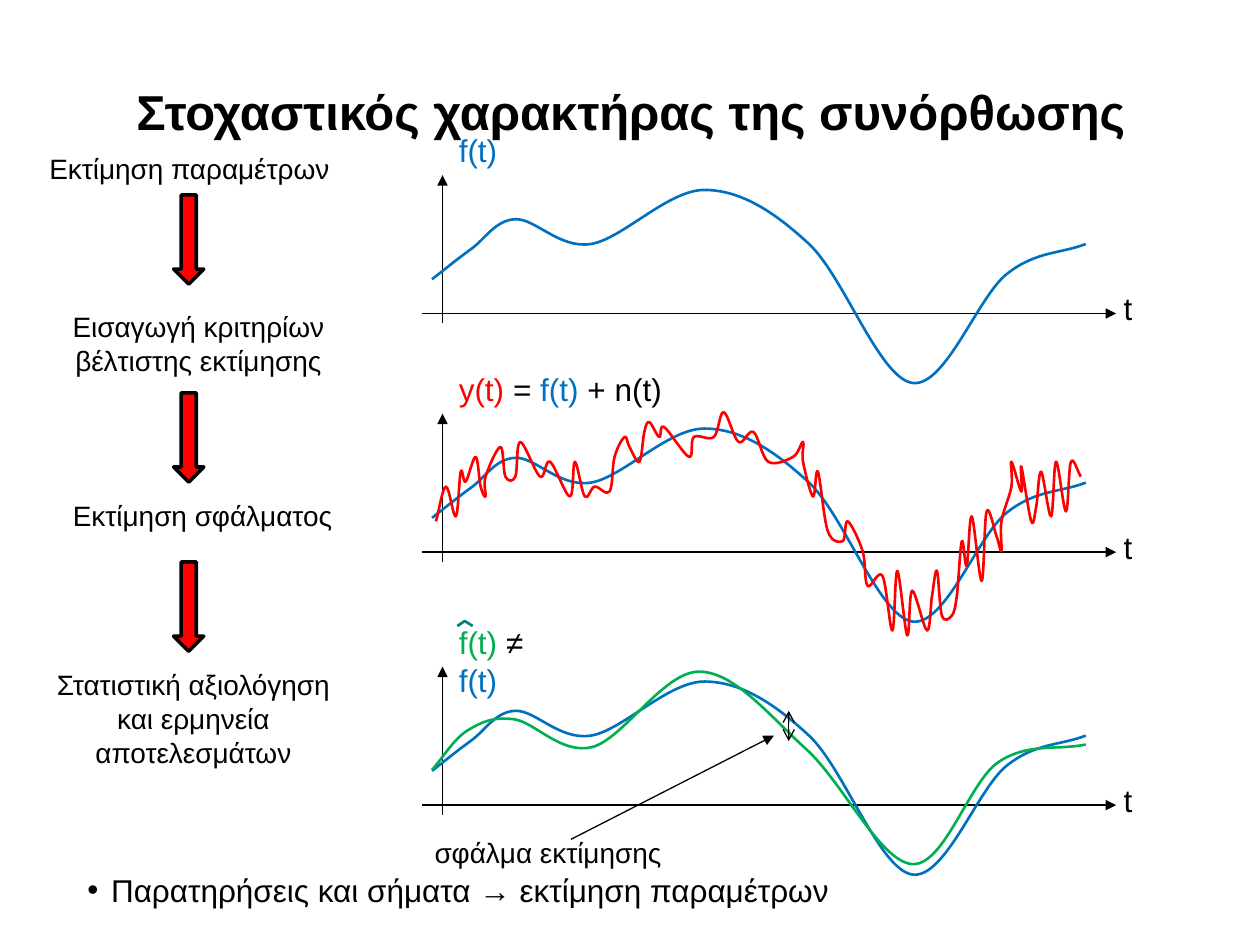
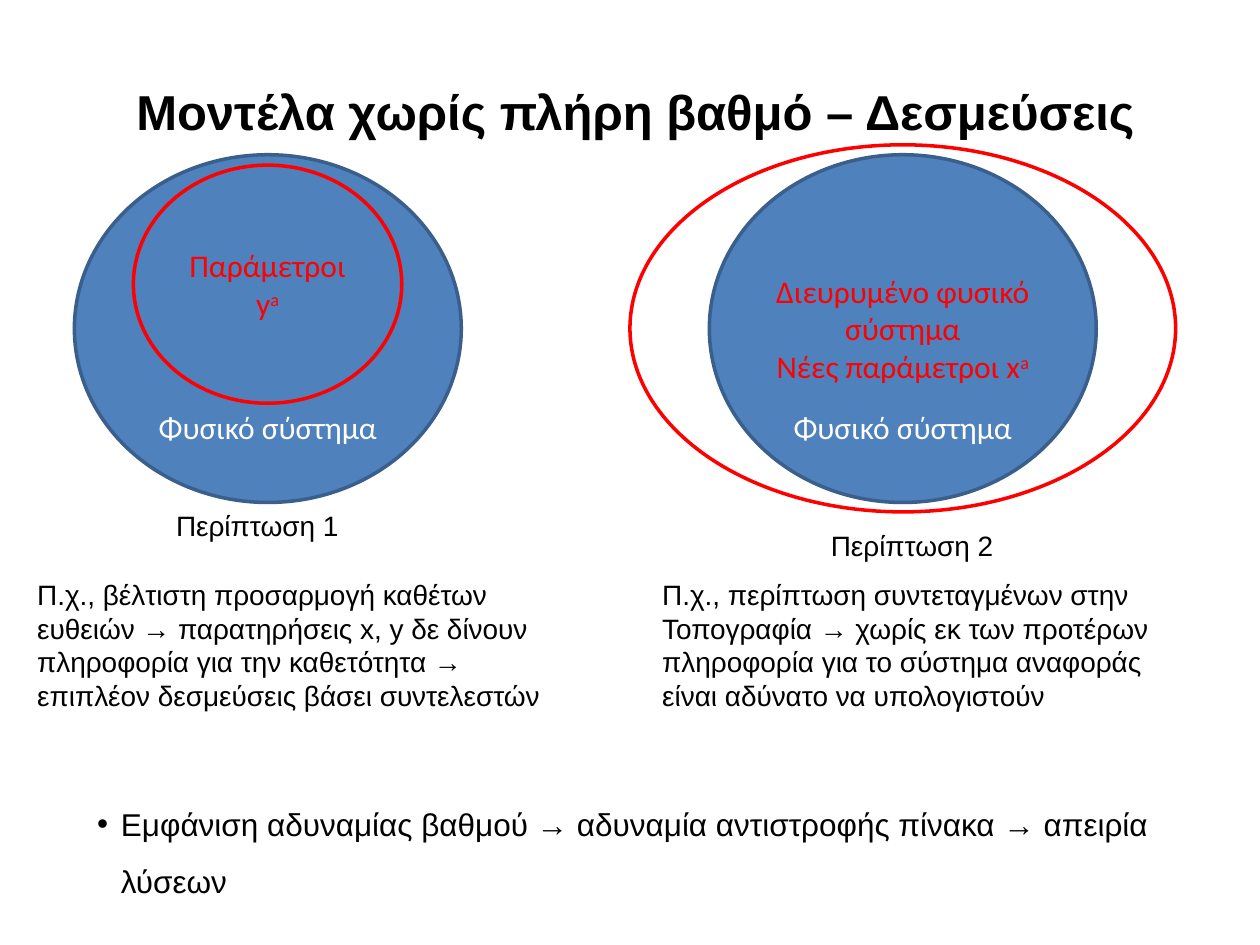
"""Build two slides on the stochastic character of adjustment and on rank-deficient models."""
from itertools import pairwise

from lxml.etree import SubElement
from pptx import Presentation
from pptx.dml.color import RGBColor
from pptx.enum.shapes import MSO_CONNECTOR, MSO_SHAPE
from pptx.enum.text import MSO_ANCHOR, MSO_AUTO_SIZE, PP_ALIGN
from pptx.oxml.ns import qn
from pptx.util import Cm, Pt

COLORS = {
    "black": "000000", "white": "FFFFFF", "red": "FF0000", "signal": "0070C0",
    "estimate": "00B050", "hat": "008080", "system": "4F81BD", "system_edge": "3A5F8C",
}
TITLE_SIZE, BODY_SIZE, LABEL_SIZE = 28, 18, 16
TITLE_BOX = (2.5, 1.52, 20.9, 1.45)

STOCHASTIC = {
    "title": "Στοχαστικός χαρακτήρας της συνόρθωσης",
    "bullet": ("Παρατηρήσεις και σήματα → εκτίμηση παραμέτρων", (1.51, 17.05, 22, 1.3)),
}
RANK = {
    "title": "Μοντέλα χωρίς πλήρη βαθμό – Δεσμεύσεις",
    "bullet": ("Εμφάνιση αδυναμίας βαθμού → αδυναμία αντιστροφής πίνακα → απειρία λύσεων",
               (1.71, 15.72, 22, 2.41)),
}
STEPS = [
    ("Εκτίμηση παραμέτρων", (0.71, 2.93, 6.22, 0.94), False),
    ("Εισαγωγή κριτηρίων βέλτιστης εκτίμησης", (0.9, 6.12, 6.2, 1.63), True),
    ("Εκτίμηση σφάλματος", (1.1, 9.93, 5.97, 0.94), False),
    ("Στατιστική αξιολόγηση και ερμηνεία αποτελεσμάτων", (0.88, 13.34, 6.04, 3), True),
]
STEP_ARROW_TOPS = [3.93, 11.33, 7.92]

SIGNAL = [(8.71, -0.69), (9.5, -1.3), (10.39, -1.9), (11.91, -1.4), (14.2, -2.49),
          (16.31, -1.4), (18.39, 1.4), (20.29, -0.79), (21.89, -1.4)]
ESTIMATE = [(8.71, -0.71), (9.42, -1.5), (10.36, -1.73), (11.94, -1.17), (14.1, -2.69),
            (16.26, -1.12), (18.39, 1.19), (20.12, -0.86), (21.89, -1.22)]
HAT = [(9.22, -3.61), (9.37, -3.71), (9.53, -3.61)]
NOISE_ORIGIN = (8.79, -2.82)
NOISE_MILLIMETRES = [
    (0, 22), (2, 15), (4, 21), (5, 12), (6, 14), (8, 9), (9, 15), (10, 17), (10, 13),
    (13, 7), (14, 13), (16, 13), (17, 6), (21, 13), (23, 10), (27, 17), (28, 10),
    (30, 17), (32, 15), (35, 16), (36, 9), (38, 5), (39, 7), (41, 10), (42, 4), (43, 2),
    (45, 5), (46, 3), (51, 9), (52, 5), (56, 5), (58, 0), (61, 6), (64, 4), (67, 10),
    (72, 9), (74, 6), (74, 10), (76, 17), (77, 12), (79, 24), (82, 26), (83, 22),
    (86, 28), (87, 35), (90, 33), (92, 44), (93, 32), (95, 45), (96, 36), (99, 44),
    (100, 37), (101, 32), (102, 41), (104, 41), (105, 37), (106, 26), (107, 31),
    (108, 21), (110, 34), (111, 20), (113, 25), (114, 28), (114, 22), (116, 15),
    (116, 10), (118, 16), (118, 11), (120, 22), (121, 19), (122, 12), (124, 21),
    (125, 10), (127, 20), (128, 10), (130, 13),
]
NOISE = [(NOISE_ORIGIN[0] + x / 10, NOISE_ORIGIN[1] + y / 10) for x, y in NOISE_MILLIMETRES]

PANELS = [
    {"axis": 6.32, "curves": [(SIGNAL, "signal")], "width": 1.3, "wrap": False,
     "formula": [("f(t)", "signal")]},
    {"axis": 11.13, "curves": [(SIGNAL, "signal"), (NOISE, "red")], "width": 4.6, "wrap": False,
     "formula": [("y(t)", "red"), (" = ", "black"), ("f(t) ", "signal"), ("+ n(t)", "black")]},
    {"axis": 16.23, "curves": [(SIGNAL, "signal"), (ESTIMATE, "estimate")], "width": 2.74,
     "wrap": True, "formula": [("f(t)", "estimate"), (" ≠ ", "black"), ("f(t)", "signal")]},
]
ERROR_LABEL = ("σφάλμα εκτίμησης", (8.51, 16.71, 5.11, 0.94))
ERROR_SPAN = ((15.9, 14.33), (15.9, 14.94))
ERROR_POINTER = ((11.51, 16.92), (15.6, 14.83))

SYSTEM = "Φυσικό σύστημα"
CASES = [
    {"system": (1.5, 3.12, 7.8, 7.01), "parameters": (2.69, 3.33, 5.41, 4.8),
     "lines": [[("Παράμετροι", False)], [("y", False), ("a", True)]],
     "caption": ("Περίπτωση 1", (3.3, 10.13, 4.19, 0.94)),
     "example": ("Π.χ., βέλτιστη προσαρμογή καθέτων ευθειών → παρατηρήσεις x, y δε δίνουν "
                 "πληροφορία για την καθετότητα → επιπλέον δεσμεύσεις βάσει συντελεστών",
                 (0.5, 11.52, 11.4, 3.76))},
    {"system": (14.3, 3.12, 7.8, 7.01), "parameters": (12.7, 2.92, 11, 7.4),
     "lines": [[("Διευρυμένο φυσικό σύστημα", False)],
               [("Νέες παράμετροι x", False), ("a", True)]],
     "caption": ("Περίπτωση 2", (16.5, 10.53, 4.19, 0.94)),
     "example": ("Π.χ., περίπτωση συντεταγμένων στην Τοπογραφία → χωρίς εκ των προτέρων "
                 "πληροφορία για το σύστημα αναφοράς είναι αδύνατο να υπολογιστούν",
                 (13.1, 11.52, 11.4, 3.76))},
]


def rgb(name):
    return RGBColor.from_string(COLORS[name])


def add_run(paragraph, text, size, color="black", font="Arial", bold=False, raised=False):
    run = paragraph.add_run()
    run.text = text
    run.font.size, run.font.name, run.font.bold = Pt(size), font, bold
    run.font.color.rgb = rgb(color)
    if raised:
        run._r.get_or_add_rPr().set("baseline", "30000")


def add_text(slide, box, pieces, size, wrap=True, align=PP_ALIGN.LEFT, bold=False):
    frame = slide.shapes.add_textbox(*map(Cm, box)).text_frame
    frame.word_wrap = wrap
    frame.auto_size = MSO_AUTO_SIZE.SHAPE_TO_FIT_TEXT
    paragraph = frame.paragraphs[0]
    paragraph.alignment = align
    for text, color in pieces:
        add_run(paragraph, text, size, color, bold=bold)
    return paragraph


def add_shape(slide, kind, box, fill, edge):
    shape = slide.shapes.add_shape(kind, *map(Cm, box))
    shape.shadow.inherit = False
    if fill:
        shape.fill.solid()
        shape.fill.fore_color.rgb = rgb(fill)
    else:
        shape.fill.background()
    shape.line.color.rgb, shape.line.width = rgb(edge), Pt(2)
    return shape


def add_ellipse(slide, box, fill, edge, lines, color, anchor):
    frame = add_shape(slide, MSO_SHAPE.OVAL, box, fill, edge).text_frame
    frame.word_wrap, frame.vertical_anchor = True, anchor
    for index, line in enumerate(lines):
        paragraph = frame.add_paragraph() if index else frame.paragraphs[0]
        paragraph.alignment = PP_ALIGN.CENTER
        for text, raised in line:
            add_run(paragraph, text, BODY_SIZE, color, "Calibri", raised=raised)


def add_arrow(slide, start, end, **heads):
    connector = slide.shapes.add_connector(
        MSO_CONNECTOR.STRAIGHT, *map(Cm, start), *map(Cm, end))
    connector.line.color.rgb, connector.line.width = rgb("black"), Pt(0.75)
    line = connector.line._get_or_add_ln()
    for tag, kind in heads.items():
        SubElement(line, qn(f"a:{tag}"), type=kind)
    SubElement(connector._element.spPr, qn("a:effectLst"))


def add_outline(slide, knots, axis, color):
    start, *rest = [(Cm(x), Cm(axis + y)) for x, y in knots]
    builder = slide.shapes.build_freeform(*start)
    builder.add_line_segments(rest, close=False)
    outline = builder.convert_to_shape()
    outline.shadow.inherit = False
    outline.fill.background()
    outline.line.color.rgb, outline.line.width = rgb(color), Pt(1.5)
    return outline


def add_curve(slide, knots, axis, color):
    """Draw a Catmull-Rom curve through the knots as cubic Bézier segments."""
    geometry = add_outline(slide, knots, axis, color)._element.spPr.find(qn("a:custGeom"))
    points = [(int(pt.get("x")), int(pt.get("y"))) for pt in geometry.iter(qn("a:pt"))]
    padded = [points[0], *points, points[-1]]
    thirds = [((c[0] - a[0]) / 6, (c[1] - a[1]) / 6) for a, c in zip(padded, padded[2:])]
    for end in (0, -1):
        thirds[end] = (thirds[end][0] * 2, thirds[end][1] * 2)
    segments = list(geometry.iter(qn("a:lnTo")))
    for segment, ((p, m), (q, n)) in zip(segments, pairwise(zip(points, thirds))):
        segment.tag = qn("a:cubicBezTo")
        controls = [(p[0] + m[0], p[1] + m[1]), (q[0] - n[0], q[1] - n[1])]
        for index, (x, y) in enumerate(controls):
            point = SubElement(segment, qn("a:pt"), x=str(round(x)), y=str(round(y)))
            segment.insert(index, point)


def add_slide(presentation, content):
    slide = presentation.slides.add_slide(presentation.slide_layouts[6])
    add_text(slide, TITLE_BOX, [(content["title"], "black")], TITLE_SIZE, wrap=False, bold=True)
    text, box = content["bullet"]
    paragraph = add_text(slide, box, [(text, "black")], BODY_SIZE)
    paragraph.line_spacing = 1.5
    properties = paragraph._p.get_or_add_pPr()
    properties.set("marL", str(Cm(0.48)))
    properties.set("indent", str(-Cm(0.48)))
    SubElement(properties, qn("a:buFont"), typeface="Arial")
    SubElement(properties, qn("a:buChar"), char="•")
    return slide


def add_panel(slide, panel):
    axis = panel["axis"]
    add_arrow(slide, (8.51, axis), (22.5, axis), tailEnd="triangle")
    add_text(slide, (22.4, axis - 0.61, 0.69, 1.02), [("t", "black")], BODY_SIZE, wrap=False)
    add_arrow(slide, (8.92, axis + 0.2), (8.92, axis - 2.79), tailEnd="triangle")
    for knots, color in panel["curves"]:
        add_curve(slide, knots, axis, color)
    add_text(slide, (9, axis - 3.8, panel["width"], 1.02), panel["formula"],
             BODY_SIZE, wrap=panel["wrap"])


def build_stochastic(presentation):
    slide = add_slide(presentation, STOCHASTIC)
    for panel in PANELS:
        add_panel(slide, panel)
    add_outline(slide, HAT, PANELS[-1]["axis"], "hat")
    add_arrow(slide, *ERROR_SPAN, headEnd="arrow", tailEnd="arrow")
    add_arrow(slide, *ERROR_POINTER, tailEnd="triangle")
    text, box = ERROR_LABEL
    add_text(slide, box, [(text, "black")], LABEL_SIZE, wrap=False)
    for text, box, wrap in STEPS:
        add_text(slide, box, [(text, "black")], LABEL_SIZE, wrap, PP_ALIGN.CENTER)
    for top in STEP_ARROW_TOPS:
        add_shape(slide, MSO_SHAPE.DOWN_ARROW, (3.5, top, 0.61, 1.8), "red", "black")


def build_rank(presentation):
    slide = add_slide(presentation, RANK)
    for case in CASES:
        add_ellipse(slide, case["system"], "system", "system_edge", [[(SYSTEM, False)]],
                    "white", MSO_ANCHOR.BOTTOM)
        add_ellipse(slide, case["parameters"], None, "red", case["lines"],
                    "red", MSO_ANCHOR.MIDDLE)
        for text, box in (case["caption"], case["example"]):
            add_text(slide, box, [(text, "black")], LABEL_SIZE)


def main():
    presentation = Presentation()
    presentation.slide_width, presentation.slide_height = Cm(25.4), Cm(19.05)
    build_stochastic(presentation)
    build_rank(presentation)
    presentation.save("out.pptx")


if __name__ == "__main__":
    main()
